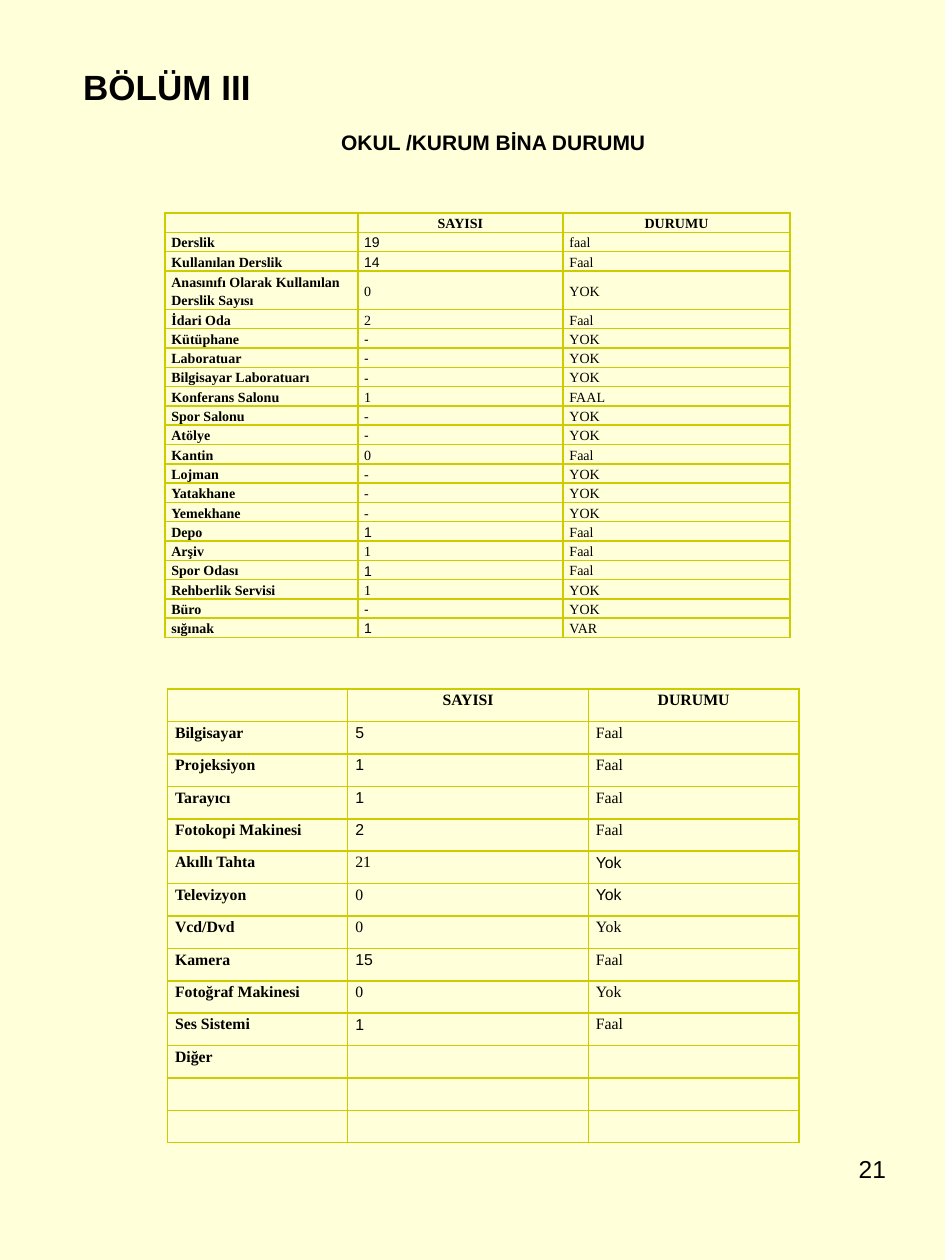
"""Build the school building and equipment status page."""
from dataclasses import dataclass, field

from lxml import etree
from pptx import Presentation
from pptx import util as u
from pptx.dml.color import RGBColor
from pptx.enum import text
from pptx.oxml import ns


@dataclass(frozen=True)
class Theme:
    back: str = "FFFFD9"
    ink: str = "000000"
    rule: str = "CCCC00"
    sans: str = "Arial"
    serif: str = "Times New Roman"
    head: float = 20
    sub: float = 12
    page: float = 14
    line: float = 1
    lead: float = 1.15


@dataclass(frozen=True)
class Row:
    name: str = ""
    count: str = ""
    state: str = ""
    sans: tuple[int, ...] = ()


@dataclass(frozen=True)
class Grid:
    box: tuple[float, float, float, float]
    cols: tuple[float, ...]
    size: float
    pad: float
    anchor: text.MSO_ANCHOR
    rows: list[Row] = field(default_factory=list)


THEME = Theme()
COUNT, STATE = (1,), (2,)
HEADER = Row("", "SAYISI", "DURUMU")

ROOMS = Grid((1.31, 1.69, 4.96, 3.37), (1.53, 1.63, 1.8), 8, 0.05, text.MSO_ANCHOR.MIDDLE, [
    HEADER,
    Row("Derslik", "19", "faal", COUNT),
    Row("Kullanılan Derslik", "14", "Faal", COUNT),
    Row("Anasınıfı Olarak Kullanılan\nDerslik Sayısı", "0", "YOK"),
    Row("İdari Oda", "2", "Faal"),
    Row("Kütüphane", "-", "YOK", COUNT),
    Row("Laboratuar", "-", "YOK", COUNT),
    Row("Bilgisayar Laboratuarı", "-", "YOK", COUNT),
    Row("Konferans Salonu", "1", "FAAL"),
    Row("Spor Salonu", "-", "YOK"),
    Row("Atölye", "-", "YOK", COUNT),
    Row("Kantin", "0", "Faal"),
    Row("Lojman", "-", "YOK"),
    Row("Yatakhane", "-", "YOK"),
    Row("Yemekhane", "-", "YOK"),
    Row("Depo", "1", "Faal", COUNT),
    Row("Arşiv", "1", "Faal"),
    Row("Spor Odası", "1", "Faal", COUNT),
    Row("Rehberlik Servisi", "1", "YOK"),
    Row("Büro", "-", "YOK", COUNT),
    Row("sığınak", "1", "VAR", COUNT),
])

TOOLS = Grid((1.33, 5.47, 5, 3.6), (1.43, 1.91, 1.67), 9, 0.06, text.MSO_ANCHOR.TOP, [
    HEADER,
    Row("Bilgisayar", "5", "Faal", COUNT),
    Row("Projeksiyon", "1", "Faal", COUNT),
    Row("Tarayıcı", "1", "Faal", COUNT),
    Row("Fotokopi Makinesi", "2", "Faal", COUNT),
    Row("Akıllı Tahta", "21", "Yok", STATE),
    Row("Televizyon", "0", "Yok", STATE),
    Row("Vcd/Dvd", "0", "Yok"),
    Row("Kamera", "15", "Faal", COUNT),
    Row("Fotoğraf Makinesi", "0", "Yok"),
    Row("Ses Sistemi", "1", "Faal", COUNT),
    Row("Diğer"),
    Row(),
    Row(),
])


def add_run(para, words: str, size: float, face: str, bold: bool = False) -> None:
    run = para.add_run()
    run.text = words
    run.font.size = u.Pt(size)
    run.font.name = face
    run.font.bold = bold
    run.font.color.rgb = RGBColor.from_string(THEME.ink)


def set_box(shape, box: tuple[float, ...]) -> None:
    shape.left, shape.top, shape.width, shape.height = map(u.Inches, box)


def fill_text(shape, words: str, size: float, align: text.PP_ALIGN, anchor: text.MSO_ANCHOR,
              bold: bool = True, wrap: bool = False) -> None:
    frame = shape.text_frame
    frame.word_wrap = wrap
    frame.auto_size = text.MSO_AUTO_SIZE.NONE if wrap else text.MSO_AUTO_SIZE.SHAPE_TO_FIT_TEXT
    frame.vertical_anchor = anchor
    para = frame.paragraphs[0]
    para.alignment = align
    add_run(para, words, size, THEME.sans, bold)


def rule_cell(cell) -> None:
    cell.fill.background()
    props = cell._tc.get_or_add_tcPr()
    for spot, side in enumerate(("lnL", "lnR", "lnT", "lnB")):
        line = etree.Element(ns.qn(f"a:{side}"), w=str(u.Pt(THEME.line)))
        fill = etree.SubElement(line, ns.qn("a:solidFill"))
        etree.SubElement(fill, ns.qn("a:srgbClr"), val=THEME.rule)
        props.insert(spot, line)


def fill_cell(cell, words: str, grid: Grid, face: str, bold: bool, align: text.PP_ALIGN) -> None:
    rule_cell(cell)
    cell.margin_left = cell.margin_right = u.Inches(grid.pad)
    cell.margin_top = cell.margin_bottom = 0
    cell.vertical_anchor = grid.anchor
    frame = cell.text_frame
    for spot, line in enumerate(words.split("\n")):
        para = frame.add_paragraph() if spot else frame.paragraphs[0]
        para.alignment = align
        para.line_spacing = THEME.lead
        if line:
            add_run(para, line, grid.size, face, bold)
        else:
            para._p.get_or_add_endParaRPr().set("sz", str(grid.size * 100))


def draw_grid(slide, grid: Grid) -> None:
    frame = slide.shapes.add_table(len(grid.rows), len(grid.cols), *map(u.Inches, grid.box))
    table = frame.table
    table.first_row = table.horz_banding = False
    for col, width in zip(table.columns, grid.cols):
        col.width = u.Inches(width)
    lines = [row.name.count("\n") + 1 for row in grid.rows]
    unit = grid.box[3] / sum(lines)
    for r, row in enumerate(grid.rows):
        table.rows[r].height = u.Inches(unit * lines[r])
        align = text.PP_ALIGN.CENTER if row is HEADER else text.PP_ALIGN.LEFT
        for c, words in enumerate((row.name, row.count, row.state)):
            face = THEME.sans if c in row.sans else THEME.serif
            fill_cell(table.cell(r, c), words, grid, face, c == 0 or row is HEADER, align)


def main() -> None:
    deck = Presentation()
    deck.slide_width, deck.slide_height = u.Inches(7.5), u.Inches(10)
    slide = deck.slides.add_slide(deck.slide_layouts[5])
    slide.background.fill.solid()
    slide.background.fill.fore_color.rgb = RGBColor.from_string(THEME.back)

    title = slide.shapes.title
    set_box(title, (0.56, 0.47, 1.54, 0.44))
    fill_text(title, "BÖLÜM III", THEME.head, text.PP_ALIGN.LEFT, text.MSO_ANCHOR.TOP)

    sub = slide.shapes.add_textbox(*map(u.Inches, (2.61, 0.98, 2.64, 0.3)))
    fill_text(sub, "OKUL /KURUM BİNA DURUMU", THEME.sub, text.PP_ALIGN.LEFT, text.MSO_ANCHOR.MIDDLE)

    for grid in (ROOMS, TOOLS):
        draw_grid(slide, grid)

    page = slide.shapes.add_textbox(*map(u.Inches, (5.38, 9.11, 1.75, 0.69)))
    fill_text(page, "21", THEME.page, text.PP_ALIGN.RIGHT, text.MSO_ANCHOR.TOP, False, True)
    deck.save("out.pptx")


if __name__ == "__main__":
    main()
